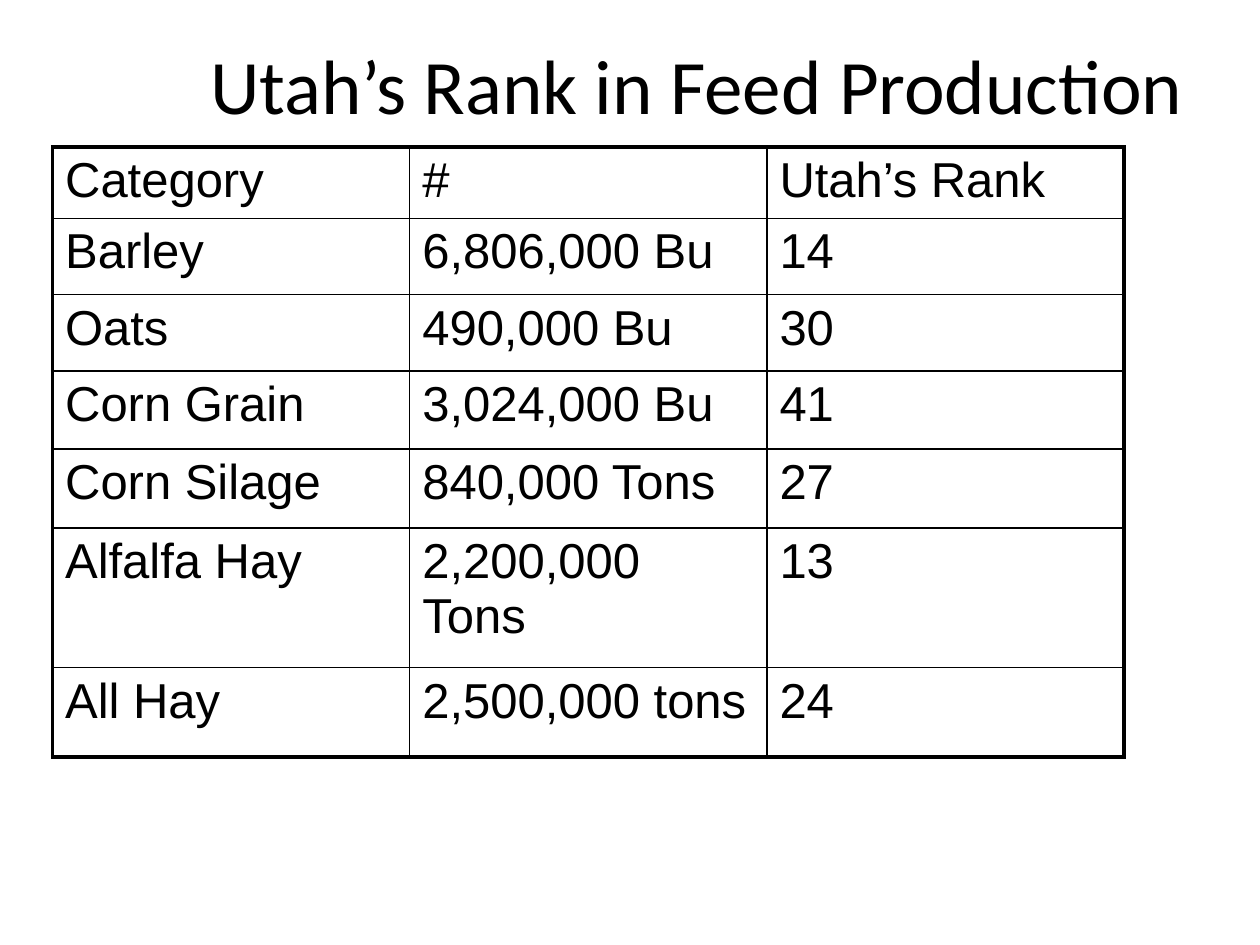
from lxml import etree
from pptx import Presentation
from pptx.dml.color import RGBColor
from pptx.enum.text import MSO_ANCHOR, PP_ALIGN
from pptx.oxml.ns import qn
from pptx.util import Cm, Pt

MIDDLE = MSO_ANCHOR.MIDDLE
CENTER = PP_ALIGN.CENTER

COLORS = {"text": "000000", "border": "000000", "background": "FFFFFF"}
TITLE_FONT = {"name": "Calibri", "size": Pt(44), "bold": False}
CELL_FONT = {"name": "Arial", "size": Pt(28), "bold": False}
OUTER, INNER = Pt(2.25), Pt(1)

ROWS = [
    ("Category", "#", "Utah’s Rank"),
    ("Barley", "6,806,000 Bu", "14"),
    ("Oats", "490,000 Bu", "30"),
    ("Corn Grain", "3,024,000 Bu", "41"),
    ("Corn Silage", "840,000 Tons", "27"),
    ("Alfalfa Hay", "2,200,000 Tons", "13"),
    ("All Hay", "2,500,000 tons", "24"),
]
ROW_HEIGHTS = [1.4, 1.54, 1.54, 1.57, 1.59, 2.82, 1.8]


def write(p, text, font):
    r = p.add_run()
    r.text = text
    for name, value in font.items():
        setattr(r.font, name, value)
    r.font.color.rgb = RGBColor.from_string(COLORS["text"])


def add_title(s, left, top, width, height):
    tf = s.shapes.add_textbox(Cm(left), Cm(top), Cm(width), Cm(height)).text_frame
    tf.word_wrap = True
    tf.vertical_anchor = MIDDLE
    p = tf.paragraphs[0]
    p.alignment = CENTER
    write(p, "Utah’s Rank in Feed Production", TITLE_FONT)


def set_borders(cell, widths):
    tc_pr = cell._tc.get_or_add_tcPr()
    for side, width in widths.items():
        ln = etree.SubElement(tc_pr, qn(f"a:ln{side}"), w=str(width))
        fill = etree.SubElement(ln, qn("a:solidFill"))
        etree.SubElement(fill, qn("a:srgbClr"), val=COLORS["border"])


def add_rank_table(s, left, top, width):
    n_rows, n_cols = len(ROWS), len(ROWS[0])
    table = s.shapes.add_table(n_rows, n_cols, Cm(left), Cm(top),
                               Cm(width), Cm(sum(ROW_HEIGHTS))).table
    table.first_row = table.horz_banding = False
    for column in table.columns:
        column.width = Cm(width / n_cols)

    for i, (values, height) in enumerate(zip(ROWS, ROW_HEIGHTS)):
        table.rows[i].height = Cm(height)
        for j, text in enumerate(values):
            cell = table.cell(i, j)
            write(cell.text_frame.paragraphs[0], text, CELL_FONT)
            # Heavy frame around the table, thin lines inside
            set_borders(cell, {
                "L": OUTER if j == 0 else INNER,
                "R": OUTER if j == n_cols - 1 else INNER,
                "T": OUTER if i == 0 else INNER,
                "B": OUTER if i == n_rows - 1 else INNER,
            })
            cell.fill.background()


def main():
    prs = Presentation()
    prs.slide_width, prs.slide_height = Cm(25.4), Cm(19.05)
    s = prs.slides.add_slide(prs.slide_layouts[6])
    s.background.fill.solid()
    s.background.fill.fore_color.rgb = RGBColor.from_string(COLORS["background"])
    add_title(s, 3.25, 0.64, 21.6, 2.1)
    add_rank_table(s, 1.06, 2.96, 21.6)
    prs.save("out.pptx")


if __name__ == "__main__":
    main()
